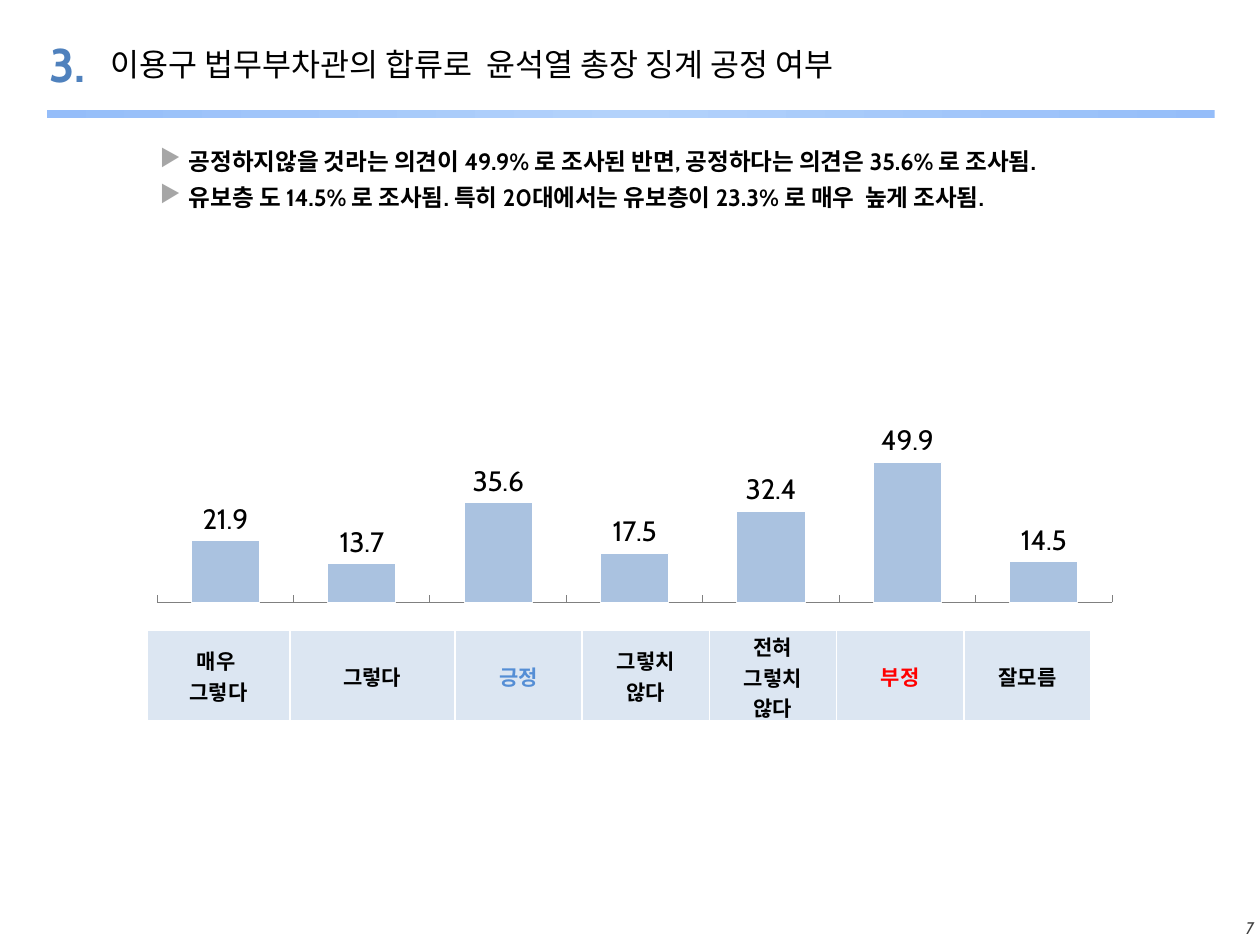
from copy import deepcopy
from typing import NamedTuple

from lxml.etree import SubElement
from pptx import Presentation
from pptx.chart.data import CategoryChartData
from pptx.dml.color import RGBColor
from pptx.enum.chart import XL_CHART_TYPE, XL_LABEL_POSITION, XL_TICK_LABEL_POSITION, XL_TICK_MARK
from pptx.enum.shapes import MSO_SHAPE
from pptx.enum.text import MSO_ANCHOR, PP_ALIGN
from pptx.oxml.ns import qn
from pptx.util import Inches, Pt

LATIN = "Cabin"
KOREAN = "Noto Sans CJK KR"


class Label(NamedTuple):
    text: str
    left: float
    top: float
    width: float
    height: float
    size: float
    color: str
    font: str = LATIN
    bold: bool = False
    italic: bool = False
    align: PP_ALIGN = PP_ALIGN.LEFT
    margin_x: float = 0
    margin_y: float = 0


class Answer(NamedTuple):
    text: str
    value: float
    width: float = 1.01
    color: str = "000000"


LABELS = [
    Label("7", 9.78, 7.28, 0.17, 0.16, 9.6, "404040", italic=True, align=PP_ALIGN.RIGHT),
    Label("3.", 0.39, 0.28, 0.7, 0.45, 26.9, "4F81BD", bold=True),
    Label("이용구 법무부차관의 합류로  윤석열 총장 징계 공정 여부",
          0.78, 0.31, 6.72, 0.4, 18, "000000", KOREAN, margin_x=0.1, margin_y=0.05),
]
FINDINGS = [
    "공정하지않을 것라는 의견이 49.9% 로 조사된 반면, 공정하다는 의견은 35.6% 로 조사됨.",
    "유보층 도 14.5% 로 조사됨. 특히 20대에서는 유보층이 23.3% 로 매우  높게 조사됨.",
]
ANSWERS = [
    Answer("매우 \n그렇다", 21.9, 1.13),
    Answer("그렇다", 13.7, 1.31),
    Answer("긍정", 35.6, color="558ED5"),
    Answer("그렇치\n않다", 17.5),
    Answer("전혀\n그렇치\n않다", 32.4),
    Answer("부정", 49.9, color="FF0000"),
    Answer("잘모름", 14.5),
]


def rgb(value: str) -> RGBColor:
    return RGBColor.from_string(value)


def style_paragraph(para, size: float, color: str, name: str = LATIN,
                    bold: bool = False, italic: bool = False) -> None:
    font = para.font
    font.size, font.name, font.bold, font.italic = Pt(size), name, bold, italic
    font.color.rgb = rgb(color)
    if name == KOREAN:
        properties = para._p.pPr.find(qn("a:defRPr"))
        SubElement(properties, qn("a:ea"), typeface=name)


def add_label(page, label: Label) -> None:
    box = page.shapes.add_textbox(Inches(label.left), Inches(label.top),
                                  Inches(label.width), Inches(label.height))
    frame = box.text_frame
    frame.word_wrap = False
    frame.vertical_anchor = MSO_ANCHOR.MIDDLE
    frame.margin_left = frame.margin_right = Inches(label.margin_x)
    frame.margin_top = frame.margin_bottom = Inches(label.margin_y)
    para = frame.paragraphs[0]
    para.text = label.text
    para.alignment = label.align
    style_paragraph(para, label.size, label.color, label.font, label.bold, label.italic)


def add_rule(page) -> None:
    rule = page.shapes.add_shape(MSO_SHAPE.RECTANGLE, Inches(0.37), Inches(0.87),
                                 Inches(9.27), Inches(0.07))
    rule.shadow.inherit = False
    rule.line.fill.background()
    rule.fill.gradient()
    rule.fill.gradient_angle = 0
    stops = rule._element.spPr.find(qn("a:gradFill")).find(qn("a:gsLst"))
    stops.insert(1, deepcopy(stops[0]))
    for stop, position, color in zip(rule.fill.gradient_stops, (0, 0.5, 1),
                                     ("95BDF9", "B3D2FB", "95BDF9")):
        stop.position = position
        stop.color.rgb = rgb(color)


def add_findings(page) -> None:
    box = page.shapes.add_textbox(Inches(0.94), Inches(1.14), Inches(8.83), Inches(0.6))
    frame = box.text_frame
    frame.word_wrap = True
    frame.margin_left = frame.margin_right = frame.margin_top = frame.margin_bottom = 0
    for index, finding in enumerate(FINDINGS):
        para = frame.add_paragraph() if index else frame.paragraphs[0]
        para.text = finding
        para.line_spacing = 1.1
        para.space_before = Pt(2.9)
        properties = para._p.get_or_add_pPr()
        properties.set("marL", str(Inches(0.56)))
        properties.set("indent", str(Inches(-0.23)))
        bullet_color = SubElement(properties, qn("a:buClr"))
        SubElement(bullet_color, qn("a:srgbClr"), val="A6A6A6")
        SubElement(properties, qn("a:buChar"), char="▶")
        style_paragraph(para, 13.5, "000000", bold=True)


def add_answer_chart(page) -> None:
    data = CategoryChartData()
    data.categories = [str(number) for number in range(1, len(ANSWERS) + 1)]
    data.add_series("Series 1", [answer.value for answer in ANSWERS])
    chart = page.shapes.add_chart(XL_CHART_TYPE.COLUMN_CLUSTERED, Inches(1.17), Inches(3.28),
                                  Inches(7.66), Inches(1.65), data).chart
    chart.has_legend = chart.has_title = False
    chart.font.name, chart.font.size = LATIN, Pt(11)
    chart.font.color.rgb = rgb("000000")

    for axis in (chart.category_axis, chart.value_axis):
        axis.tick_label_position = XL_TICK_LABEL_POSITION.NONE
        axis.major_tick_mark = axis.minor_tick_mark = XL_TICK_MARK.NONE
        axis.has_major_gridlines = False
    chart.category_axis.major_tick_mark = XL_TICK_MARK.INSIDE
    chart.category_axis.format.line.color.rgb = rgb("808080")
    chart.category_axis.format.line.width = Pt(0.5)
    chart.value_axis.minimum_scale, chart.value_axis.maximum_scale = 0, 60
    chart.value_axis.format.line.fill.background()

    plot = chart.plots[0]
    plot.gap_width = 100
    plot.vary_by_categories = False
    bars = plot.series[0].format
    bars.fill.solid()
    bars.fill.fore_color.rgb = rgb("AAC2E0")
    bars.line.color.rgb = rgb("FFFFFF")
    bars.line.width = Pt(0.5)
    plot.has_data_labels = True
    labels = plot.data_labels
    labels.show_value = True
    labels.number_format, labels.number_format_is_linked = "0.0", False
    labels.position = XL_LABEL_POSITION.OUTSIDE_END
    labels.font.name, labels.font.size = LATIN, Pt(16)
    labels.font.color.rgb = rgb("000000")

    area = chart._chartSpace.chart.plotArea
    for old in area.findall(qn("c:layout")):
        area.remove(old)
    layout = SubElement(area, qn("c:layout"))
    area.insert(0, layout)
    manual = SubElement(layout, qn("c:manualLayout"))
    for tag, value in (("layoutTarget", "inner"), ("xMode", "edge"), ("yMode", "edge"),
                       ("x", "0.01"), ("y", "0.1"), ("w", "0.99"), ("h", "0.81")):
        SubElement(manual, qn(f"c:{tag}"), val=value)


def add_answer_table(page) -> None:
    table = page.shapes.add_table(1, len(ANSWERS), Inches(1.17), Inches(5),
                                  Inches(7.5), Inches(0.72)).table
    table.first_row = table.horz_banding = False
    for column, cell, answer in zip(table.columns, table.rows[0].cells, ANSWERS):
        column.width = Inches(answer.width)
        cell.text = answer.text
        cell.vertical_anchor = MSO_ANCHOR.MIDDLE
        cell.margin_left = cell.margin_right = cell.margin_top = Inches(0.01)
        cell.margin_bottom = 0
        for para in cell.text_frame.paragraphs:
            para.alignment = PP_ALIGN.CENTER
            style_paragraph(para, 12, answer.color, KOREAN, bold=True)
        properties = cell._tc.get_or_add_tcPr()
        for side in ("lnL", "lnR", "lnT", "lnB"):
            border = SubElement(properties, qn(f"a:{side}"), w=str(Pt(1)))
            SubElement(SubElement(border, qn("a:solidFill")), qn("a:srgbClr"), val="FFFFFF")
        cell.fill.solid()
        cell.fill.fore_color.rgb = rgb("DCE6F2")


def main() -> None:
    """Build the survey result slide."""
    deck = Presentation()
    deck.slide_width, deck.slide_height = Inches(10), Inches(7.5)
    page = deck.slides.add_slide(deck.slide_layouts[6])
    add_rule(page)
    for label in LABELS:
        add_label(page, label)
    add_findings(page)
    add_answer_chart(page)
    add_answer_table(page)
    deck.save("out.pptx")


if __name__ == "__main__":
    main()
